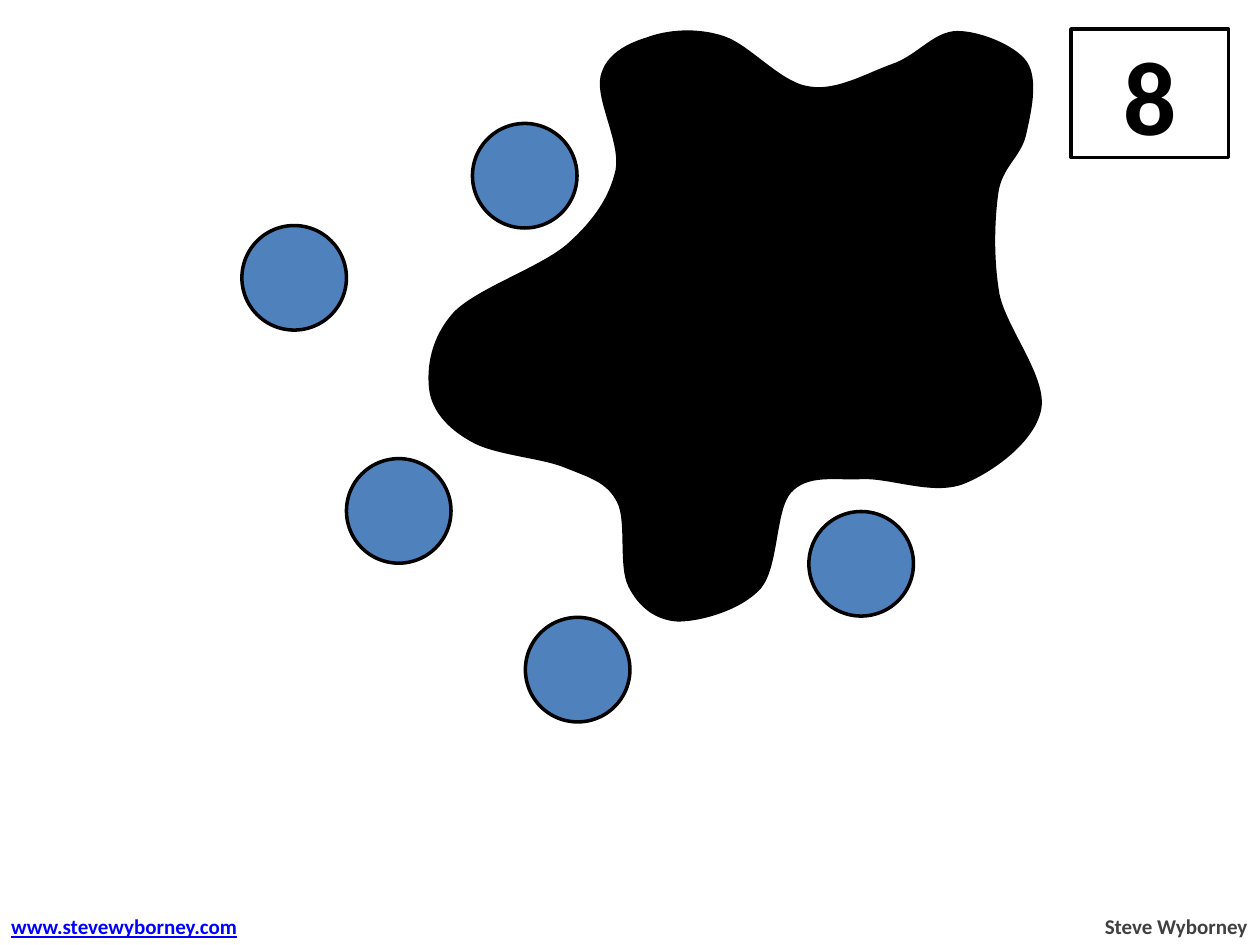
from lxml import etree
from pptx import Presentation
from pptx import util as u
from pptx.dml.color import RGBColor
from pptx.enum import shapes, text
from pptx.oxml.ns import qn

COLORS = {"black": "000000", "white": "FFFFFF", "dot": "4F81BD",
          "link": "0000FF", "gray": "404040"}


def paint(shape, fill):
    shape.shadow.inherit = False
    shape.fill.solid()
    shape.fill.fore_color.rgb = RGBColor.from_string(COLORS[fill])
    shape.line.color.rgb = RGBColor.from_string(COLORS["black"])
    shape.line.width = u.Pt(2)


def write(shape, words, size, color, align, underline=False):
    para = shape.text_frame.paragraphs[0]
    para.alignment = align
    span = para.add_run()
    span.text = words
    span.font.name = "Calibri"
    span.font.size = u.Pt(size)
    span.font.bold = True
    span.font.underline = underline
    span.font.color.rgb = RGBColor.from_string(COLORS[color])


deck = Presentation()
deck.slide_width = u.Inches(10)
deck.slide_height = u.Inches(7.5)
page = deck.slides.add_slide(deck.slide_layouts[6])

DOT_SIZE = u.Inches(0.83)
DOTS = [(1.92, 1.79), (3.75, 0.98), (6, 2.27), (6.42, 4.06),
        (3.95, 2.55), (2.75, 3.64), (4.17, 4.9), (5.02, 3.64)]
for left, top in DOTS:
    dot = page.shapes.add_shape(shapes.MSO_SHAPE.OVAL, u.Inches(left), u.Inches(top),
                                DOT_SIZE, DOT_SIZE)
    paint(dot, "dot")

FOOTERS = [
    (8.66, 1.34, "Steve Wyborney", "gray", text.PP_ALIGN.RIGHT, False),
    (-0.01, 2.05, "www.stevewyborney.com", "link", text.PP_ALIGN.LEFT, True),
]
for left, width, words, color, align, underline in FOOTERS:
    box = page.shapes.add_textbox(u.Inches(left), u.Inches(7.2),
                                  u.Inches(width), u.Inches(0.3))
    box.text_frame.word_wrap = False
    box.text_frame.auto_size = text.MSO_AUTO_SIZE.SHAPE_TO_FIT_TEXT
    write(box, words, 12, color, align, underline)

total = page.shapes.add_shape(shapes.MSO_SHAPE.RECTANGLE, u.Inches(8.5), u.Inches(0.23),
                              u.Inches(1.25), u.Inches(1.02))
paint(total, "white")
total.text_frame.vertical_anchor = text.MSO_ANCHOR.MIDDLE
write(total, "8", 60, "black", text.PP_ALIGN.CENTER)

# Hundredths of an inch: two control points, then the end of each curve
START = (374, 349)
CURVES = [
    ((356, 339), (344, 325), (342, 309)),
    ((340, 292), (343, 269), (361, 249)),
    ((379, 230), (431, 213), (452, 194)),
    ((473, 175), (485, 157), (490, 135)),
    ((494, 113), (474, 79), (478, 61)),
    ((482, 44), (498, 36), (514, 31)),
    ((530, 25), (553, 23), (574, 30)),
    ((595, 37), (619, 67), (642, 70)),
    ((664, 74), (689, 59), (709, 52)),
    ((729, 45), (742, 26), (760, 26)),
    ((777, 26), (805, 37), (814, 50)),
    ((823, 64), (817, 89), (813, 107)),
    ((809, 124), (794, 132), (791, 153)),
    ((788, 175), (787, 205), (792, 234)),
    ((798, 262), (830, 300), (825, 325)),
    ((820, 350), (787, 374), (764, 383)),
    ((740, 392), (707, 378), (684, 379)),
    ((662, 380), (641, 375), (627, 390)),
    ((614, 404), (617, 449), (603, 466)),
    ((588, 483), (556, 492), (538, 492)),
    ((521, 491), (508, 481), (500, 465)),
    ((492, 449), (499, 413), (491, 398)),
    ((483, 382), (469, 378), (449, 370)),
    ((430, 362), (392, 360), START),
]
ends = [curve[-1] for curve in CURVES]
builder = page.shapes.build_freeform(*START, scale=u.Inches(0.01))
builder.add_line_segments(ends, close=True)
blot = builder.convert_to_shape()
paint(blot, "black")
origin_x = min(x for x, y in ends)
origin_y = min(y for x, y in ends)
for segment, curve in zip(list(blot._element.iter(qn("a:lnTo"))), CURVES):
    bend = etree.Element(qn("a:cubicBezTo"))
    for x, y in curve:
        etree.SubElement(bend, qn("a:pt"), x=str(x - origin_x), y=str(y - origin_y))
    segment.getparent().replace(segment, bend)

deck.save("out.pptx")
